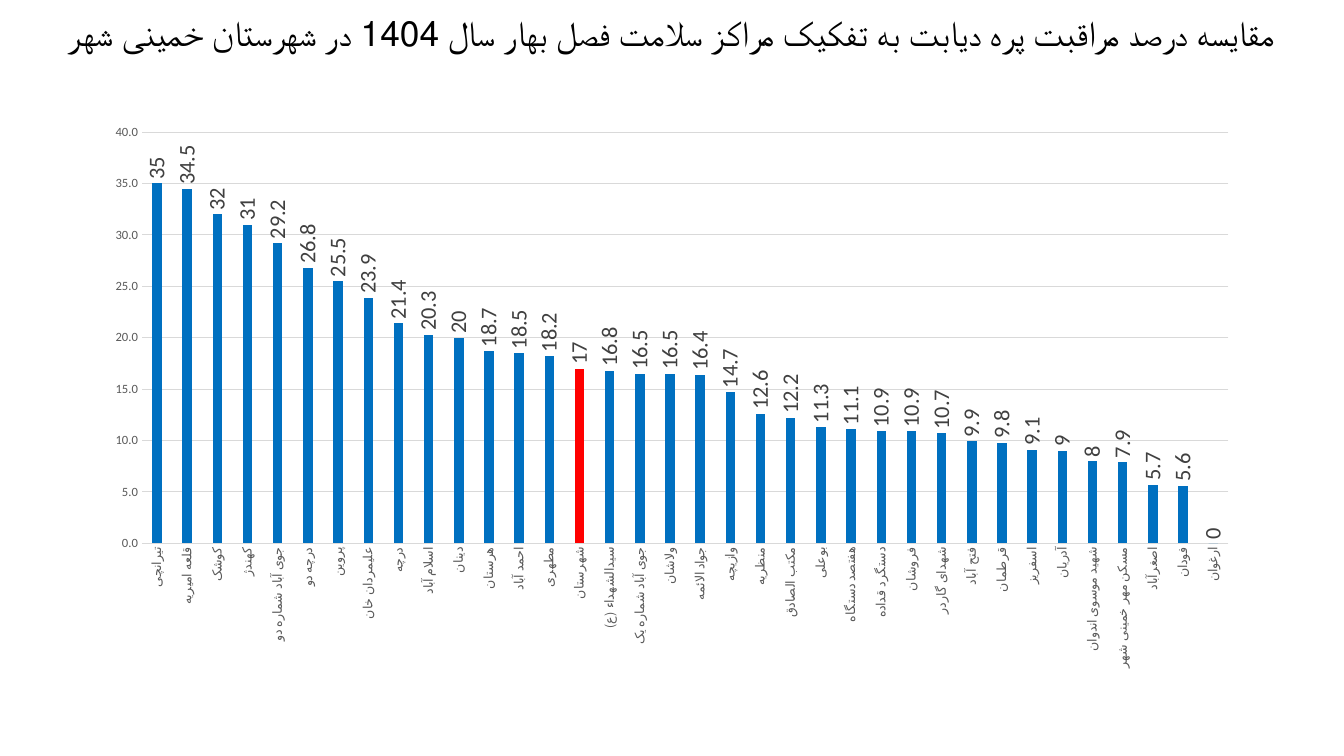
from pptx import Presentation
from pptx.chart.data import CategoryChartData
from pptx.dml.color import RGBColor
from pptx.enum.chart import XL_CHART_TYPE as Chart, XL_LABEL_POSITION as LabelPos, XL_TICK_MARK as Tick
from pptx.enum.text import MSO_ANCHOR as Anchor, PP_ALIGN as Align
from pptx.util import Pt

PX = 9525
FONT = "Calibri"
BLACK, GREY, DARK, RULE = "000000", "595959", "404040", "D9D9D9"
BLUE, RED = "0070C0", "FF0000"

TITLE = "مقایسه درصد مراقبت پره دیابت به تفکیک مراکز سلامت فصل بهار سال 1404 در شهرستان خمینی شهر"
COUNTY = "شهرستان"
CENTRES = [
    ("تیرانچی", 35), ("قلعه امیریه", 34.5), ("کوشک", 32), ("کهندژ", 31),
    ("جوی آباد شماره دو", 29.2), ("درچه دو", 26.8), ("پروین", 25.5),
    ("علیمردان خان", 23.9), ("درچه", 21.4), ("اسلام آباد", 20.3),
    ("دینان", 20), ("هرستان", 18.7), ("احمد آباد", 18.5), ("مطهری", 18.2),
    (COUNTY, 17), ("سیدالشهداء (ع)", 16.8), ("جوی آباد شماره یک", 16.5),
    ("ولاشان", 16.5), ("جواد الائمه", 16.4), ("وازیچه", 14.7),
    ("منظریه", 12.6), ("مکتب الصادق", 12.2), ("بوعلی", 11.3),
    ("هفتصد دستگاه", 11.1), ("دستگرد قداده", 10.9), ("فروشان", 10.9),
    ("شهدای گاردر", 10.7), ("فتح آباد", 9.9), ("قرطمان", 9.8),
    ("اسفریز", 9.1), ("آدریان", 9), ("شهید موسوی اندوان", 8),
    ("مسکن مهر خمینی شهر", 7.9), ("اصغرآباد", 5.7), ("فودان", 5.6),
    ("ارغوان", 0),
]


def rgb(color):
    """Turn a hex string into a colour."""
    return RGBColor.from_string(color)


class Deck:
    """Holds the style and the current slide."""

    def __init__(self, width, height):
        self.prs = Presentation()
        self.prs.slide_width, self.prs.slide_height = width * PX, height * PX
        self.s = self.prs.slides.add_slide(self.prs.slide_layouts[6])

    def style(self, font, size, color):
        """Set typeface, size and colour of a font."""
        font.name, font.size = FONT, Pt(size)
        font.color.rgb = rgb(color)

    def rule(self, line, color):
        """Draw a thin chart line."""
        line.color.rgb = rgb(color)
        line.width = Pt(0.75)

    def title(self, box, text, size):
        """Add a centred right-to-left title."""
        tf = self.s.shapes.add_textbox(*(v * PX for v in box)).text_frame
        tf.word_wrap = True
        tf.vertical_anchor = Anchor.MIDDLE
        tf.text = text
        p = tf.paragraphs[0]
        p.alignment, p.line_spacing = Align.CENTER, 0.9
        p._p.get_or_add_pPr().set("rtl", "1")
        self.style(p.runs[0].font, size, BLACK)

    def columns(self, box, rows, marked):
        """Add a column chart with one marked column."""
        names, values = zip(*rows)
        data = CategoryChartData()
        data.categories = names
        data.add_series("درصد", values)
        chart = self.s.shapes.add_chart(
            Chart.COLUMN_CLUSTERED, *(v * PX for v in box), data).chart
        chart.has_title = chart.has_legend = False
        self.style(chart.font, 10, BLACK)

        cat, val = chart.category_axis, chart.value_axis
        for axis in (cat, val):
            axis.major_tick_mark = axis.minor_tick_mark = Tick.NONE
            self.style(axis.tick_labels.font, 9, GREY)
        self.rule(cat.format.line, RULE)
        val.format.line.fill.background()
        self.rule(val.major_gridlines.format.line, RULE)
        val.minimum_scale, val.maximum_scale, val.major_unit = 0, 40, 5
        val.tick_labels.number_format = "0.0"
        val.tick_labels.number_format_is_linked = False

        plot = chart.plots[0]
        plot.gap_width, plot.overlap = 219, -27
        plot.vary_by_categories = False
        series = plot.series[0]
        series.invert_if_negative = False
        for fmt, color in ((series.format, BLUE),
                           (series.points[names.index(marked)].format, RED)):
            fmt.fill.solid()
            fmt.fill.fore_color.rgb = rgb(color)

        labels = series.data_labels
        labels.show_value = True
        labels.position = LabelPos.OUTSIDE_END
        self.style(labels.font, 16, DARK)
        for part in (cat, labels):
            for body in part._element.xpath(".//a:bodyPr"):
                body.set("rot", "-5400000")
                body.set("vert", "horz")


def main():
    """Build the slide and save it."""
    deck = Deck(1280, 720)
    deck.title((16, 0, 1247, 67), TITLE, 25.2)
    deck.columns((88, 108, 1104, 540), CENTRES, COUNTY)
    deck.prs.save("out.pptx")


if __name__ == "__main__":
    main()
